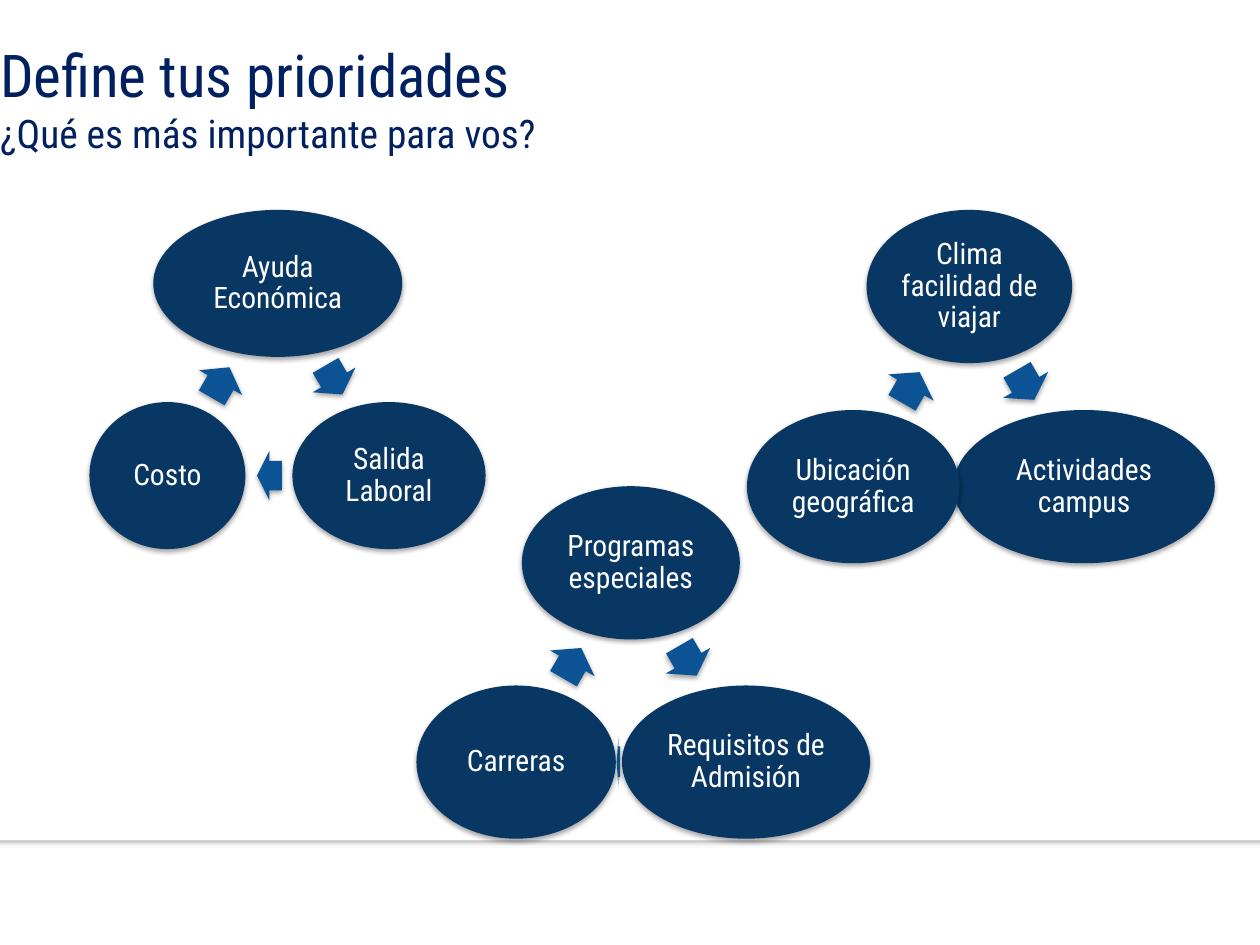
"""Build the slide of priority cycles: three rings of ellipses joined by arrows."""
from dataclasses import dataclass

import lxml.etree
import pptx
import pptx.dml.color
import pptx.enum.shapes
import pptx.enum.text
import pptx.oxml.ns
import pptx.util

PX = 9144
SHAPE = pptx.enum.shapes.MSO_SHAPE
ALIGN = pptx.enum.text.PP_ALIGN
ANCHOR = pptx.enum.text.MSO_ANCHOR


@dataclass(frozen=True)
class Theme:
    font: str = "Roboto Condensed"
    title: str = "002060"
    node: str = "083763"
    node_text: str = "FFFFFF"
    arrow: str = "0B5394"
    panel: str = "FFFFFF"
    shadow: str = "000000"
    title_size: int = 48
    subtitle_size: int = 32
    node_size: int = 24


@dataclass(frozen=True)
class Node:
    text: str
    x: int
    w: int


@dataclass(frozen=True)
class Arrow:
    x: int
    y: int
    w: int
    turn: int


@dataclass(frozen=True)
class Cycle:
    top_y: int
    base_y: int
    node_h: int
    arrow_h: int
    top: Node
    right: Node
    left: Node
    down: Arrow
    up: Arrow
    across_x: int
    across_w: int
    across_turn: int = 180

    @property
    def across(self) -> Arrow:
        y = self.base_y + (self.node_h - self.arrow_h) // 2
        return Arrow(self.across_x, y, self.across_w, self.across_turn)


THEME = Theme()
CYCLES = [
    Cycle(237, 454, 166, 56,
          Node("Ayuda Económica", 173, 281),
          Node("Salida Laboral", 330, 218),
          Node("Costo", 101, 176),
          Arrow(358, 401, 38, 60), Arrow(229, 404, 40, 300), 290, 28),
    Cycle(237, 463, 173, 59,
          Node("Clima facilidad de viajar", 978, 232),
          Node("Actividades campus", 1076, 295),
          Node("Ubicación geográfica", 843, 240),
          Arrow(1138, 405, 39, 60), Arrow(1008, 408, 40, 300), 1078, 4, 0),
    Cycle(549, 774, 173, 58,
          Node("Programas especiales", 589, 246),
          Node("Requisitos de Admisión", 702, 280),
          Node("Carreras", 470, 225),
          Arrow(757, 717, 39, 60), Arrow(626, 720, 40, 300), 696, 4),
]


def rgb(color: str) -> pptx.dml.color.RGBColor:
    """Turn a hex string into a colour."""
    return pptx.dml.color.RGBColor.from_string(color)


def style_run(r, size: int, color: str) -> None:
    """Set the theme font, a size and a colour on a run."""
    r.font.name = THEME.font
    r.font.size = pptx.util.Pt(size)
    r.font.color.rgb = rgb(color)


def add_shadow(sp) -> None:
    """Give a shape the soft shadow below it."""
    qn = pptx.oxml.ns.qn
    sp.shadow.inherit = False
    effects = sp.element.spPr.find(qn("a:effectLst"))
    outer = lxml.etree.SubElement(
        effects, qn("a:outerShdw"), blurRad=str(pptx.util.Pt(4)),
        dist=str(pptx.util.Pt(2)), dir="5400000", rotWithShape="0")
    color = lxml.etree.SubElement(outer, qn("a:srgbClr"), val=THEME.shadow)
    lxml.etree.SubElement(color, qn("a:alpha"), val="35000")


def add_solid(shapes, kind, x: int, y: int, w: int, h: int, color: str):
    """Add a filled shape without outline, with a shadow."""
    sp = shapes.add_shape(kind, x * PX, y * PX, w * PX, h * PX)
    sp.fill.solid()
    sp.fill.fore_color.rgb = rgb(color)
    sp.line.fill.background()
    add_shadow(sp)
    return sp


def set_margins(tf, margin: int) -> None:
    """Set all four insets of a text frame."""
    tf.margin_left = tf.margin_right = margin * PX
    tf.margin_top = tf.margin_bottom = margin * PX


def add_node(shapes, node: Node, y: int, h: int) -> None:
    """Add a labelled ellipse."""
    sp = add_solid(shapes, SHAPE.OVAL, node.x, y, node.w, h, THEME.node)
    tf = sp.text_frame
    tf.text = node.text
    tf.word_wrap = True
    tf.vertical_anchor = ANCHOR.MIDDLE
    set_margins(tf, 3)
    p = tf.paragraphs[0]
    p.alignment = ALIGN.CENTER
    p.line_spacing = 0.9
    style_run(p.runs[0], THEME.node_size, THEME.node_text)


def add_arrow(shapes, arrow: Arrow, h: int) -> None:
    """Add a turned block arrow."""
    sp = add_solid(shapes, SHAPE.RIGHT_ARROW, arrow.x, arrow.y, arrow.w, h, THEME.arrow)
    sp.adjustments[0] = 0.6
    sp.adjustments[1] = 0.5
    sp.rotation = arrow.turn


def add_cycle(s, cycle: Cycle) -> None:
    """Add a group of three ellipses and the arrows between them."""
    shapes = s.shapes.add_group_shape().shapes
    add_node(shapes, cycle.top, cycle.top_y, cycle.node_h)
    add_arrow(shapes, cycle.down, cycle.arrow_h)
    add_node(shapes, cycle.right, cycle.base_y, cycle.node_h)
    add_arrow(shapes, cycle.across, cycle.arrow_h)
    add_node(shapes, cycle.left, cycle.base_y, cycle.node_h)
    add_arrow(shapes, cycle.up, cycle.arrow_h)


def set_title(s) -> None:
    """Place and fill the two-line title."""
    sp = s.shapes.title
    sp.left, sp.top, sp.width, sp.height = 0, 43 * PX, 1280 * PX, 178 * PX
    tf = sp.text_frame
    tf.text = "Define tus prioridades\v¿Qué es más importante para vos?"
    tf.word_wrap = True
    tf.auto_size = pptx.enum.text.MSO_AUTO_SIZE.NONE
    tf.vertical_anchor = ANCHOR.TOP
    set_margins(tf, 0)
    p = tf.paragraphs[0]
    p.alignment = ALIGN.LEFT
    for r, size in zip(p.runs, (THEME.title_size, THEME.subtitle_size)):
        style_run(r, size, THEME.title)


def main() -> None:
    """Build and save the slide."""
    prs = pptx.Presentation()
    prs.slide_width, prs.slide_height = 1422 * PX, 1067 * PX
    s = prs.slides.add_slide(prs.slide_layouts[5])
    panel = add_solid(s.shapes, SHAPE.RECTANGLE, -15, -8, 1452, 957, THEME.panel)
    panel.element.addnext(s.shapes.title.element)
    set_title(s)
    for cycle in CYCLES:
        add_cycle(s, cycle)
    prs.save("out.pptx")


if __name__ == "__main__":
    main()
